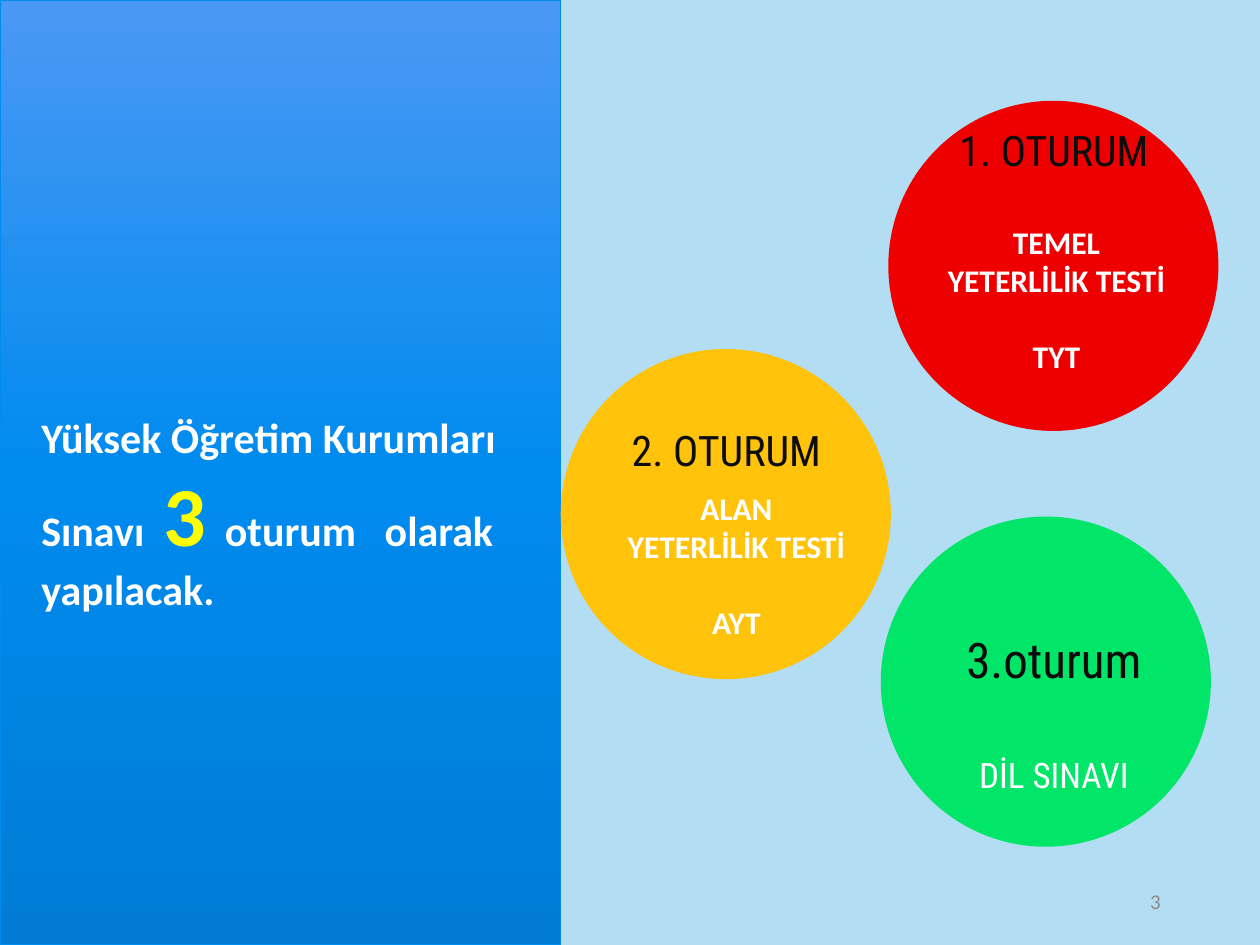
from copy import deepcopy
from pptx import Presentation, util as u
from pptx.dml.color import RGBColor
from pptx.enum import shapes, text

W, H = 10, 7.5
SIZE = 2.62   # circle diameter
WIDE = 1.93   # label width
HEAD, BODY = "Roboto Condensed", "Calibri"
WHITE, DARK = "FFFFFF", "0D0D0D"
CENTER, LEFT, RIGHT = text.PP_ALIGN.CENTER, text.PP_ALIGN.LEFT, text.PP_ALIGN.RIGHT

PANEL = [(0, "4B98F4"), (0.5, "008BEF"), (1, "007CD4")]

# Paragraph: (runs, space before); run: (words, size, font, colour, bold)
def session(name):
    return [([(name, 24, HEAD, DARK, False)], 0)]

def exam(name, code):
    return [([(name, 18, BODY, WHITE, True)], 0),
            ([(code, 18, BODY, WHITE, True)], 22)]

# Circle: (left, top, colour, labels); label: (dx, dy, height, paragraphs)
CIRCLES = [
    (4.45, 2.77, "FFC30B", [
        (0.35, 0.55, 0.5, session("2. OTURUM")),
        (0.43, 1.06, 1.31, exam("ALAN YETERLİLİK TESTİ", "AYT"))]),
    (6.99, 4.1, "01E569", [
        (0.41, 0.85, 1.4, [([("3.oturum", 28, HEAD, DARK, False)], 0),
                           ([("DİL SINAVI", 20, HEAD, WHITE, False)], 37)])]),
    (7.05, 0.8, "EF0000", [
        (0.37, 0.92, 1.31, exam("TEMEL YETERLİLİK TESTİ", "TYT")),
        (0.35, 0.14, 0.5, session("1. OTURUM"))]),
]

MESSAGE = [([("Yüksek Öğretim Kurumları Sınavı", 24, BODY, WHITE, True),
             (" 3 ", 48, BODY, "FFFF00", True),
             ("oturum ", 24, BODY, WHITE, True),
             (" ", 48, BODY, WHITE, True),
             ("olarak yapılacak.", 24, BODY, WHITE, True)], 0)]
NUMBER = [([("3", 12, BODY, "8C8C8C", False)], 0)]


def rgb(code):
    return RGBColor.from_string(code)


def style(font, size, face, color, bold):
    font.size, font.name, font.bold = u.Pt(size), face, bold
    font.color.rgb = rgb(color)


def shape(home, kind, *box):
    item = home.add_shape(kind, *map(u.Inches, box))
    item.shadow.inherit = False
    return item


def label(home, box, paras, align=CENTER, anchor=text.MSO_ANCHOR.TOP):
    frame = home.add_textbox(*map(u.Inches, box)).text_frame
    frame.word_wrap = True
    frame.vertical_anchor = anchor
    for i, (runs, gap) in enumerate(paras):
        para = frame.add_paragraph() if i else frame.paragraphs[0]
        para.alignment = align
        if gap:
            para.space_before = u.Pt(gap)
        if len(runs) == 1:
            style(para.font, *runs[0][1:])
        for words, *look in runs:
            run = para.add_run()
            run.text = words
            if len(runs) > 1:
                style(run.font, *look)


deck = Presentation()
deck.slide_width, deck.slide_height = u.Inches(W), u.Inches(H)
slide = deck.slides.add_slide(deck.slide_layouts[6])
slide.background.fill.solid()
slide.background.fill.fore_color.rgb = rgb("B3DDF2")

# Left panel with a three-stop gradient
panel = shape(slide.shapes, shapes.MSO_SHAPE.RECTANGLE, 0, 0, 4.45, H)
panel.fill.gradient()
panel.fill.gradient_angle = 270
stops = panel.fill._fill._gradFill.gsLst
stops.append(deepcopy(stops[-1]))
for stop, (pos, color) in zip(panel.fill.gradient_stops, PANEL):
    stop.position = pos
    stop.color.rgb = rgb(color)
panel.line.color.rgb = rgb("008BEF")
panel.line.width = u.Pt(0.5)

# Session circles, each grouped with its labels
for x, y, color, labels in CIRCLES:
    group = slide.shapes.add_group_shape().shapes
    disc = shape(group, shapes.MSO_SHAPE.OVAL, x, y, SIZE, SIZE)
    disc.fill.solid()
    disc.fill.fore_color.rgb = rgb(color)
    disc.line.fill.background()
    for dx, dy, tall, paras in labels:
        label(group, (x + dx, y + dy, WIDE, tall), paras)

# Message and slide number
label(slide.shapes, (0.23, 3.22, 4.13, 2.02), MESSAGE, LEFT)
label(slide.shapes, (7.06, 6.95, 2.25, 0.4), NUMBER, RIGHT, text.MSO_ANCHOR.MIDDLE)

deck.save("out.pptx")
